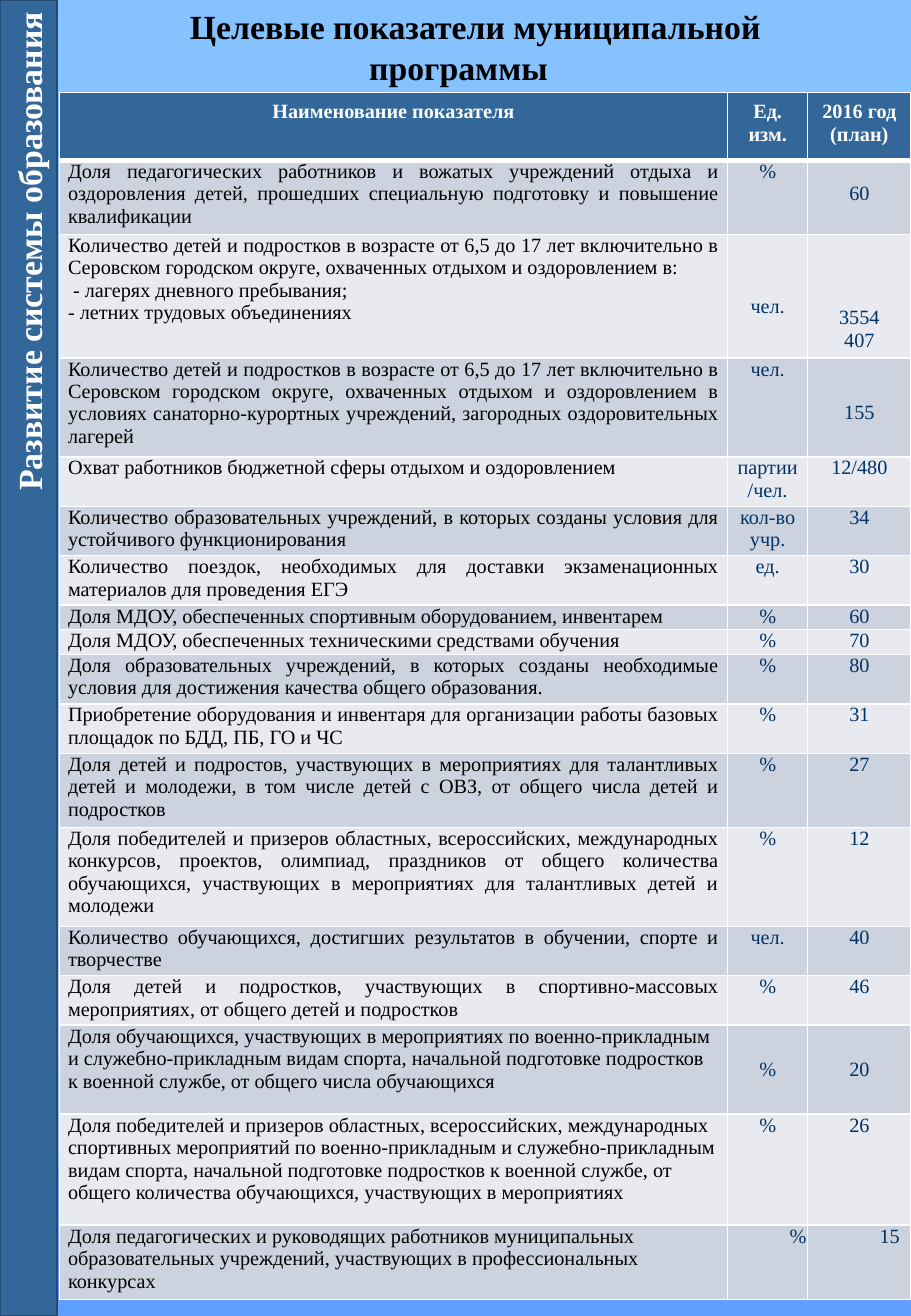
from dataclasses import dataclass

from lxml import etree
from pptx import Presentation
from pptx.dml.color import RGBColor
from pptx.enum.shapes import MSO_SHAPE as Shape
from pptx.enum.text import MSO_ANCHOR as Anchor, PP_ALIGN as Align
from pptx.oxml.ns import qn
from pptx.util import Inches, Pt

WIDTH, HEIGHT = Inches(7.5), Inches(10.83)
COL, ROW = WIDTH / 75, HEIGHT / 53.25  # grid: 75 columns, 53.25 rows
LINE = Inches(0.18)  # height of one line of table text

WHITE = RGBColor(0xFF, 0xFF, 0xFF)
BLACK = RGBColor(0x00, 0x00, 0x00)
STEEL = RGBColor(0x33, 0x66, 0x99)
STEEL_EDGE = RGBColor(0x26, 0x4B, 0x71)
NAVY = RGBColor(0x00, 0x33, 0x66)
BAND_DARK = RGBColor(0xCD, 0xD3, 0xDE)
BAND_LIGHT = RGBColor(0xE8, 0xEA, 0xEF)
SKY = RGBColor(0x85, 0xC2, 0xFF)
MIST = RGBColor(0xC4, 0xD6, 0xEB)
AZURE = RGBColor(0x5E, 0x9E, 0xFF)


@dataclass
class Indicator:
    rows: float  # height in grid rows
    name: str
    unit: str
    plan: str
    unit_gap: int = 0  # lines left free above the text
    plan_gap: int = 0
    anchor: Anchor = Anchor.TOP
    align: Align = Align.JUSTIFY
    indent: float = 0


HEADINGS = ["Наименование показателя", "Ед. изм.", "2016 год\n(план)"]
INDICATORS = [
    Indicator(3, "Доля педагогических работников и вожатых учреждений отдыха и оздоровления детей, "
              "прошедших специальную подготовку и повышение квалификации", "%", "60", plan_gap=1),
    Indicator(5, "Количество детей и подростков в возрасте от 6,5 до 17 лет включительно в Серовском "
              "городском округе, охваченных отдыхом и оздоровлением в:\n"
              " - лагерях дневного пребывания;\n- летних трудовых объединениях",
              "чел.", "3554\n407", unit_gap=1, plan_gap=3, anchor=Anchor.MIDDLE),
    Indicator(4, "Количество детей и подростков в возрасте от 6,5 до 17 лет включительно в Серовском "
              "городском округе, охваченных отдыхом и оздоровлением в условиях "
              "санаторно-курортных учреждений, загородных оздоровительных лагерей",
              "чел.", "155", plan_gap=2),
    Indicator(2, "Охват работников бюджетной сферы отдыхом и оздоровлением", "партии/чел.", "12/480"),
    Indicator(2, "Количество образовательных учреждений, в которых созданы условия для устойчивого "
              "функционирования", "кол-во учр.", "34"),
    Indicator(2, "Количество поездок, необходимых для доставки экзаменационных материалов для "
              "проведения ЕГЭ", "ед.", "30"),
    Indicator(1, "Доля МДОУ, обеспеченных спортивным оборудованием, инвентарем", "%", "60"),
    Indicator(1, "Доля МДОУ, обеспеченных техническими средствами обучения", "%", "70"),
    Indicator(2, "Доля образовательных учреждений, в которых созданы необходимые условия для "
              "достижения качества общего образования.", "%", "80"),
    Indicator(2, "Приобретение оборудования и инвентаря для организации работы базовых площадок по "
              "БДД, ПБ, ГО и ЧС", "%", "31"),
    Indicator(3, "Доля детей и подростов, участвующих в мероприятиях для талантливых детей и молодежи, "
              "в том числе детей с ОВЗ, от общего числа детей и подростков", "%", "27"),
    Indicator(4, "Доля победителей и призеров областных, всероссийских, международных конкурсов, "
              "проектов, олимпиад, праздников от общего количества обучающихся, участвующих в "
              "мероприятиях для талантливых детей и молодежи", "%", "12"),
    Indicator(2, "Количество обучающихся, достигших результатов в обучении, спорте и творчестве",
              "чел.", "40"),
    Indicator(2, "Доля детей и подростков, участвующих в спортивно-массовых мероприятиях, от общего "
              "детей и подростков", "%", "46"),
    Indicator(3.6, "Доля обучающихся, участвующих в мероприятиях по военно-прикладным и "
              "служебно-прикладным видам спорта, начальной подготовке подростков к военной службе, "
              "от общего числа обучающихся", "%", "20", anchor=Anchor.MIDDLE, align=Align.LEFT),
    Indicator(4.5, "Доля победителей и призеров областных, всероссийских, международных спортивных "
              "мероприятий по военно-прикладным и служебно-прикладным видам спорта, начальной "
              "подготовке подростков к военной службе, от общего количества обучающихся, "
              "участвующих в мероприятиях", "%", "26", align=Align.LEFT),
    Indicator(3, "Доля педагогических и руководящих работников муниципальных образовательных "
              "учреждений, участвующих в профессиональных конкурсах", "%", "15",
              align=Align.LEFT, indent=0.5),
]


class Page:
    font = "Times New Roman"

    def __init__(self, deck):
        self.slide = deck.slides.add_slide(deck.slide_layouts[6])

    def background(self, stops):
        fill = self.slide.background.fill
        fill.gradient()
        fill.gradient_angle = 270
        stop_list = self.slide.element.find(".//" + qn("a:gsLst"))
        for stop in list(stop_list):
            stop_list.remove(stop)
        for percent, color in stops:
            stop = etree.SubElement(stop_list, qn("a:gs"), pos=str(percent * 1000))
            etree.SubElement(stop, qn("a:srgbClr"), val=str(color))

    def set_text(self, frame, text, size, color, align, bold=False, indent=0):
        frame.word_wrap = True
        frame.text = text
        for paragraph in frame.paragraphs:
            paragraph.alignment = align
            if indent:
                paragraph._p.get_or_add_pPr().set("indent", str(Inches(indent)))
            font = paragraph.font
            font.name, font.size, font.bold = self.font, Pt(size), bold
            font.color.rgb = color

    def title(self, text, left, top, width, height):
        box = self.slide.shapes.add_textbox(
            int(left * COL), int(top * ROW), int(width * COL), int(height * ROW))
        self.set_text(box.text_frame, text, 20, BLACK, Align.CENTER, bold=True, indent=0.28)

    def sidebar(self, text, width):
        thick = int(width * COL)
        band = self.slide.shapes.add_shape(
            Shape.RECTANGLE, (thick - HEIGHT) // 2, (HEIGHT - thick) // 2, HEIGHT, thick)
        band.rotation = 270
        band.shadow.inherit = False
        band.fill.solid()
        band.fill.fore_color.rgb = STEEL
        band.line.color.rgb = STEEL_EDGE
        band.line.width = Pt(1)
        band.text_frame.vertical_anchor = Anchor.MIDDLE
        self.set_text(band.text_frame, text, 20, WHITE, Align.RIGHT, bold=True)

    def table(self, left, top, widths, heights):
        grid = self.slide.shapes.add_table(
            len(heights), len(widths), int(left * COL), int(top * ROW),
            int(sum(widths) * COL), int(sum(heights) * ROW)).table
        grid.horz_banding = False
        for column, width in zip(grid.columns, widths):
            column.width = int(width * COL)
        for row, height in zip(grid.rows, heights):
            row.height = int(height * ROW)
        return grid

    def cell(self, cell, fill, text, color, align, top=0, bottom=0, top_edge=1, bottom_edge=1,
             anchor=Anchor.TOP, bold=False, indent=0):
        cell.margin_left = cell.margin_right = Inches(0.07)
        cell.margin_top, cell.margin_bottom = top, bottom
        cell.vertical_anchor = anchor
        edges = {"lnL": 1, "lnR": 1, "lnT": top_edge, "lnB": bottom_edge}
        for side, points in edges.items():
            edge = etree.SubElement(cell._tc.get_or_add_tcPr(), qn("a:" + side), w=str(Pt(points)))
            paint = etree.SubElement(edge, qn("a:solidFill"))
            etree.SubElement(paint, qn("a:srgbClr"), val=str(WHITE))
        cell.fill.solid()
        cell.fill.fore_color.rgb = fill
        self.set_text(cell.text_frame, text, 12, color, align, bold, indent)


def main():
    deck = Presentation()
    deck.slide_width, deck.slide_height = WIDTH, HEIGHT
    page = Page(deck)
    page.background([(0, SKY), (40, SKY), (70, MIST), (100, AZURE)])

    # Table of target indicators
    heights = [2.75] + [item.rows for item in INDICATORS]
    targets = page.table(4.9, 3.74, [55, 6.6, 8.5], heights)
    inset = Inches(0.07)
    for column, heading in enumerate(HEADINGS):
        page.cell(targets.cell(0, column), STEEL, heading, WHITE, Align.CENTER,
                  top=inset, bottom=inset, bottom_edge=3, bold=True)
    for row, item in enumerate(INDICATORS, start=1):
        band = BAND_DARK if row % 2 else BAND_LIGHT
        edge = 3 if row == 1 else 1
        page.cell(targets.cell(row, 0), band, item.name, BLACK, item.align, top_edge=edge)
        figures = [(item.unit, item.unit_gap), (item.plan, item.plan_gap)]
        for column, (text, gap) in enumerate(figures, start=1):
            page.cell(targets.cell(row, column), band, text, NAVY, Align.CENTER, top=gap * LINE,
                      top_edge=edge, anchor=item.anchor, indent=item.indent)

    # Section band and heading
    page.sidebar("Развитие системы образования", 4.7)
    page.title("Целевые показатели муниципальной программы", 5.1, 0, 65.3, 3.78)
    deck.save("out.pptx")


if __name__ == "__main__":
    main()
